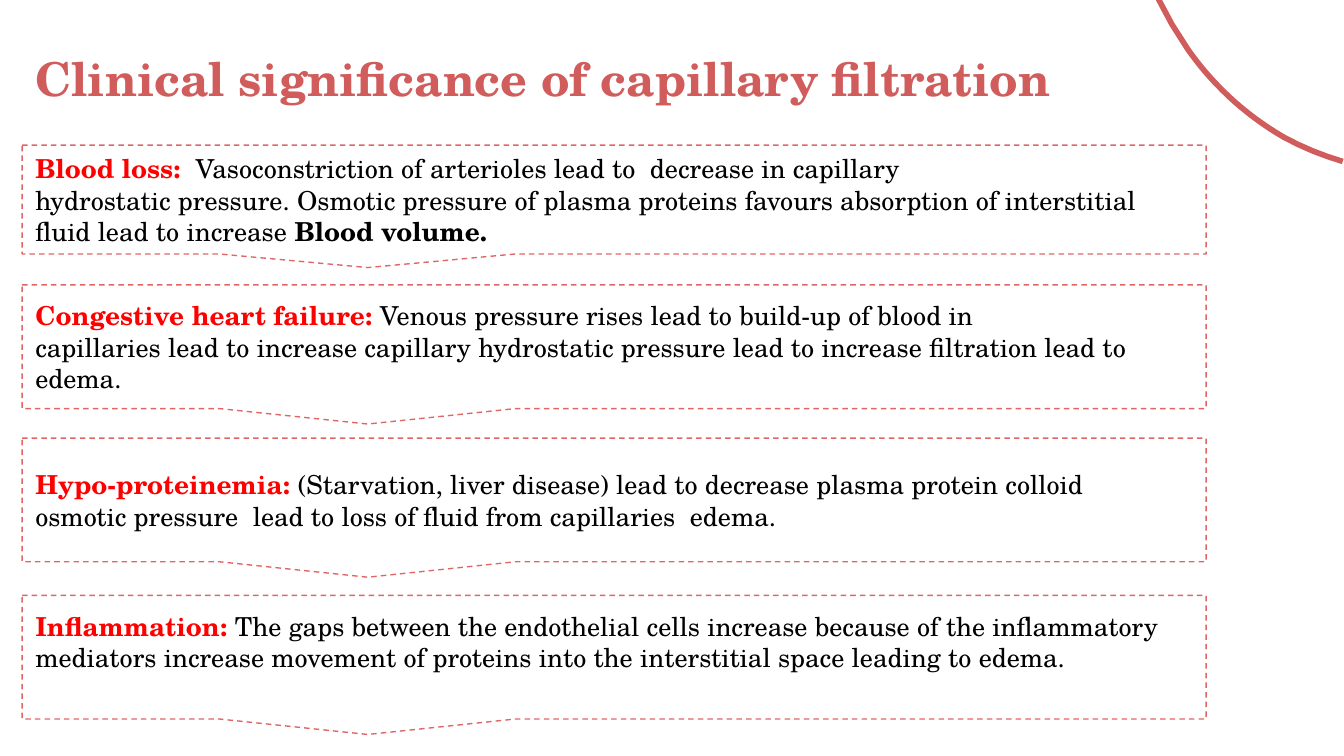
from pptx import Presentation
from pptx.dml.color import RGBColor
from pptx.enum.dml import MSO_LINE
from pptx.enum.shapes import MSO_SHAPE
from pptx.enum.text import MSO_ANCHOR, PP_ALIGN
from pptx.util import Inches, Pt

CALLOUT = MSO_SHAPE.RECTANGULAR_CALLOUT
DASH = MSO_LINE.DASH
TOP, MIDDLE = MSO_ANCHOR.TOP, MSO_ANCHOR.MIDDLE
LEFT = PP_ALIGN.LEFT
WIDE = 10
HIGH = WIDE * 9 / 16
EDGE, SPAN = 0.0164 * WIDE, 0.881 * WIDE
FONT = "TeX Gyre Schola"
ROSE, PINK, RED, BLACK = "D05C5C", "E06666", "FF0000", "000000"
STEPS = 16

CURVE = [
    [(7.61, -2.7), (8.36, -1.7), (8.14, -0.64), (8.84, 0.37)],
    [(8.84, 0.37), (9.01, 0.61), (9.24, 0.84), (9.55, 1.02)],
    [(9.55, 1.02), (10.11, 1.33), (10.8, 1.35), (11.38, 1.3)],
]

CARDS = [
    (1.08, 0.81, 0.1, [
        [("Blood loss:  ", RED, True),
         ("Vasoconstriction of arterioles lead to  decrease in capillary", BLACK, False)],
        [("hydrostatic pressure. Osmotic pressure of plasma proteins favours "
          "absorption of interstitial fluid lead to increase ", BLACK, False),
         ("Blood volume.", BLACK, True)]]),
    (2.12, 0.92, 0.1, [
        [("Congestive heart failure:", RED, True),
         (" Venous pressure rises lead to build-up of blood in", BLACK, False)],
        [("capillaries lead to increase capillary hydrostatic pressure lead to "
          "increase filtration lead to edema.", BLACK, False)]]),
    (3.26, 0.92, 0.1, [
        [("Hypo-proteinemia: ", RED, True),
         ("(Starvation, liver disease) lead to decrease plasma protein colloid", BLACK, False)],
        [("osmotic pressure  lead to loss of fluid from capillaries  edema.", BLACK, False)]]),
    (4.43, 0.92, 0.33, [
        [("Inflammation: ", RED, True),
         ("The gaps between the endothelial cells increase because of the inflammatory "
          "mediators increase movement of proteins into the interstitial space "
          "leading to edema.", BLACK, False)]]),
]


def paint(target, shade):
    """Set a colour format from a hex string."""
    target.rgb = RGBColor.from_string(shade)


def write(shape, lines, size, anchor, base=0.1):
    """Fill a shape with paragraphs of (text, colour, bold) runs."""
    frame = shape.text_frame
    frame.word_wrap = True
    frame.vertical_anchor = anchor
    frame.margin_left = frame.margin_right = frame.margin_top = Inches(0.1)
    frame.margin_bottom = Inches(base)
    for row, parts in enumerate(lines):
        para = frame.add_paragraph() if row else frame.paragraphs[0]
        para.alignment = LEFT
        para.font.name = FONT
        para.font.size = Pt(size)
        for text, shade, bold in parts:
            run = para.add_run()
            run.text = text
            run.font.bold = bold
            paint(run.font.color, shade)


def outline(shape, shade, width):
    """Give a shape a plain line without fill or shadow."""
    shape.shadow.inherit = False
    shape.fill.background()
    shape.line.width = Pt(width)
    paint(shape.line.color, shade)


def bezier(points, t):
    """Return the point at share t of a Bezier curve."""
    while len(points) > 1:
        points = [tuple(a + (b - a) * t for a, b in zip(p, q))
                  for p, q in zip(points, points[1:])]
    return points[0]


def add_arc(slide):
    """Draw the part of the corner curve that lies on the slide."""
    dots = [bezier(part, step / STEPS) for part in CURVE for step in range(STEPS)]
    dots = [(Inches(x), Inches(y)) for x, y in dots if y > -0.2 and x < WIDE + 0.1]
    pen = slide.shapes.build_freeform(*dots[0])
    pen.add_line_segments(dots[1:], close=False)
    outline(pen.convert_to_shape(), ROSE, 3)


def add_title(slide, text):
    """Add the slide heading."""
    box = slide.shapes.add_textbox(Inches(EDGE), Inches(0.27), Inches(9.32), Inches(0.92))
    write(box, [[(text, ROSE, True)]], 25, TOP)


def add_card(slide, top, height, base, lines):
    """Add a dashed callout with its text."""
    card = slide.shapes.add_shape(
        CALLOUT, Inches(EDGE), Inches(top), Inches(SPAN), Inches(height))
    card.adjustments[0], card.adjustments[1] = -0.208, 0.625
    outline(card, PINK, 0.75)
    card.line.dash_style = DASH
    write(card, lines, 14, MIDDLE, base)


def main():
    """Build and save the slide."""
    deck = Presentation()
    deck.slide_width, deck.slide_height = Inches(WIDE), Inches(HIGH)
    slide = deck.slides.add_slide(deck.slide_layouts[6])
    add_arc(slide)
    add_title(slide, "Clinical significance of capillary filtration")
    for card in CARDS:
        add_card(slide, *card)
    deck.save("out.pptx")


if __name__ == "__main__":
    main()
